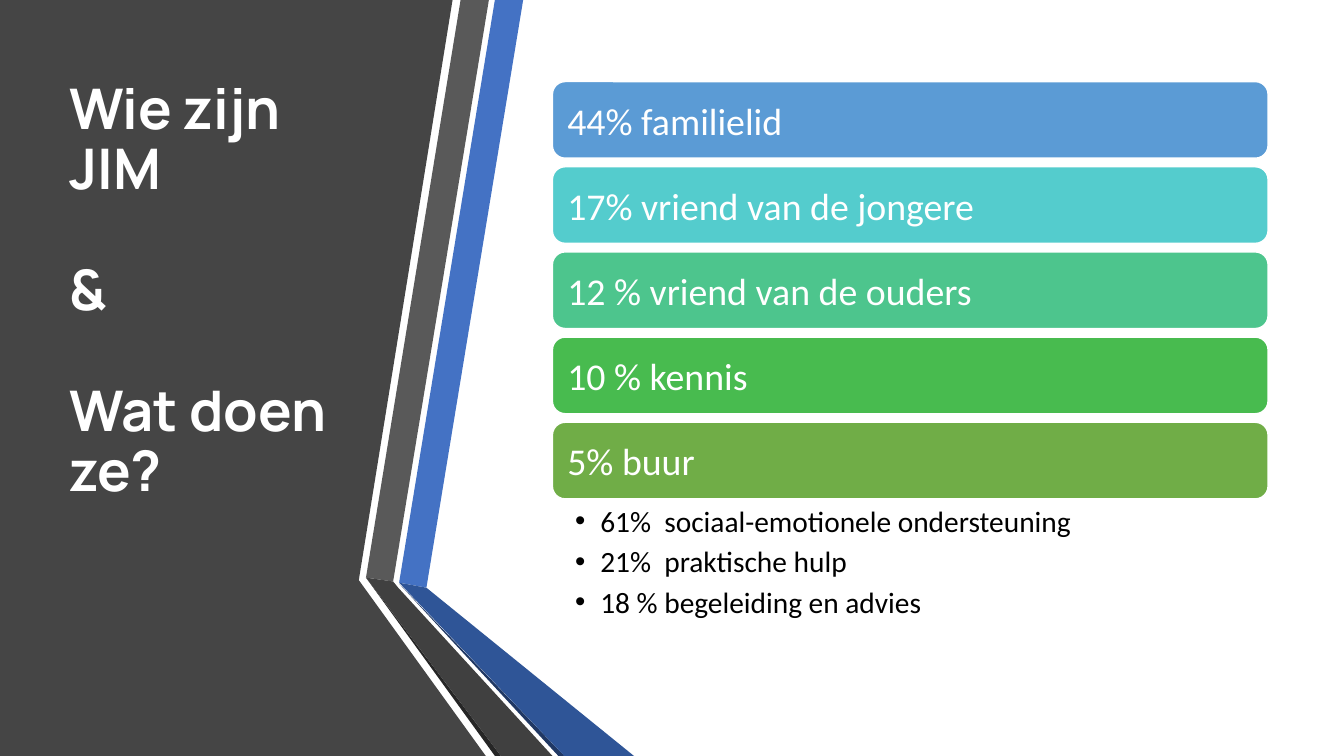
from lxml import etree
from pptx import Presentation
from pptx.dml.color import RGBColor
from pptx.enum.shapes import MSO_SHAPE as SHAPE
from pptx.enum.text import MSO_ANCHOR as ANCHOR, MSO_AUTO_SIZE as AUTO, PP_ALIGN as ALIGN
from pptx.oxml.ns import qn
from pptx.util import Pt

COLORS = {
    "white": "FFFFFF", "black": "000000", "panel": "454545",
    "blue": "4472C4", "blue_dark": "2F5597", "blue_edge": "203864",
    "gray": "595959", "gray_dark": "404040", "gray_edge": "262626",
    "bar1": "5B9BD5", "bar2": "54CCCD", "bar3": "4DC58D",
    "bar4": "48BB4F", "bar5": "70AD47",
}
TITLE = ["Wie zijn JIM", "&", "Wat doen ze?"]
BARS = [
    ("44% familielid", "bar1"),
    ("17% vriend van de jongere", "bar2"),
    ("12 % vriend van de ouders", "bar3"),
    ("10 % kennis", "bar4"),
    ("5% buur", "bar5"),
]
TASKS = [
    "61%  sociaal-emotionele ondersteuning",
    "21%  praktische hulp",
    "18 % begeleiding en advies",
]
BACKDROP = [
    ("panel", [(0, 0), (323.3, 0), (256.3, 414.4), (347, 540), (0, 540)]),
    ("blue", [(285.1, 416.2), (304.6, 419.8), (373.7, 0), (353.5, 0)]),
    ("gray", [(349.2, 0), (329, 0), (261.4, 412.6), (280.8, 415.4)]),
    ("gray_edge", [(261.4, 412.6), (353.5, 540), (357.8, 540)]),
    ("blue_edge", [(285.1, 416.9), (398.9, 540), (403.2, 540)]),
    ("blue_dark", [(285.1, 416.2), (403.2, 540), (452.9, 540), (304.6, 419.8)]),
    ("gray_dark", [(394.6, 540), (284.4, 419.8), (280.8, 415.4), (261.4, 412.6), (357.8, 540)]),
]
LEFT, WIDTH = 394.6, 511.2
BAR_TOP, BAR_H, BAR_STEP = 58.3, 54.7, 60.84
TITLE_FONT = {"name": "Manrope", "size": Pt(40), "bold": True}
BAR_FONT = {"name": "Calibri", "size": Pt(27)}
TASK_FONT = {"name": "Calibri", "size": Pt(21)}


def rgb(key):
    return RGBColor.from_string(COLORS[key])


def apply(obj, values):
    for name, value in values.items():
        setattr(obj, name, value)


def set_frame(tf, anchor, insets):
    sides = ("margin_left", "margin_top", "margin_right", "margin_bottom")
    apply(tf, {"word_wrap": True, "auto_size": AUTO.NONE, "vertical_anchor": anchor})
    apply(tf, {side: Pt(inset) for side, inset in zip(sides, insets)})


def write(tf, texts, font, color, spacing, bullet=False):
    for i, text in enumerate(texts):
        p = tf.paragraphs[0] if i == 0 else tf.add_paragraph()
        p.text = text
        p.alignment = ALIGN.LEFT
        apply(p, spacing)
        p.space_before = spacing.get("space_before", Pt(0)) if i else Pt(0)
        if bullet:
            pPr = p._p.get_or_add_pPr()
            pPr.set("marL", str(Pt(18)))
            pPr.set("indent", str(Pt(-18)))
            etree.SubElement(pPr, qn("a:buFont")).set("typeface", "Arial")
            etree.SubElement(pPr, qn("a:buChar")).set("char", "•")
        for r in p.runs:
            apply(r.font, font)
            r.font.color.rgb = rgb(color)


def paint(sp, color):
    sp.shadow.inherit = False
    sp.fill.solid()
    sp.fill.fore_color.rgb = rgb(color)


def add_outline(s, color, points):
    corners = [(Pt(x), Pt(y)) for x, y in points]
    builder = s.shapes.build_freeform(*corners[0], scale=1.0)
    builder.add_line_segments(corners[1:], close=True)
    sp = builder.convert_to_shape()
    paint(sp, color)
    sp.line.fill.background()


def add_bar(s, row, text, color):
    top = BAR_TOP + row * BAR_STEP
    sp = s.shapes.add_shape(SHAPE.ROUNDED_RECTANGLE, Pt(LEFT), Pt(top), Pt(WIDTH), Pt(BAR_H))
    paint(sp, color)
    sp.line.color.rgb = rgb("white")
    sp.line.width = Pt(1)
    set_frame(sp.text_frame, ANCHOR.MIDDLE, (8, 5, 8, 5))
    write(sp.text_frame, [text], BAR_FONT, "white", {})


def main():
    prs = Presentation()
    apply(prs, {"slide_width": Pt(960), "slide_height": Pt(540)})
    s = prs.slides.add_slide(prs.slide_layouts[5])

    for color, points in BACKDROP:
        add_outline(s, color, points)

    title = s.shapes.title
    apply(title, {"left": Pt(42.5), "top": Pt(54), "width": Pt(218.9), "height": Pt(401.8)})
    set_frame(title.text_frame, ANCHOR.TOP, (7.2, 3.6, 7.2, 3.6))
    write(title.text_frame, TITLE, TITLE_FONT, "white",
          {"line_spacing": 0.9, "space_before": Pt(43.2)})
    s.shapes._spTree.append(title._element)

    for row, (text, color) in enumerate(BARS):
        add_bar(s, row, text, color)

    tasks = s.shapes.add_textbox(Pt(LEFT), Pt(356.4), Pt(WIDTH), Pt(94.3))
    set_frame(tasks.text_frame, ANCHOR.TOP, (16.2, 2.9, 15.1, 2.9))
    write(tasks.text_frame, TASKS, TASK_FONT, "black", {"space_after": Pt(3.6)}, bullet=True)

    prs.save("out.pptx")


if __name__ == "__main__":
    main()
